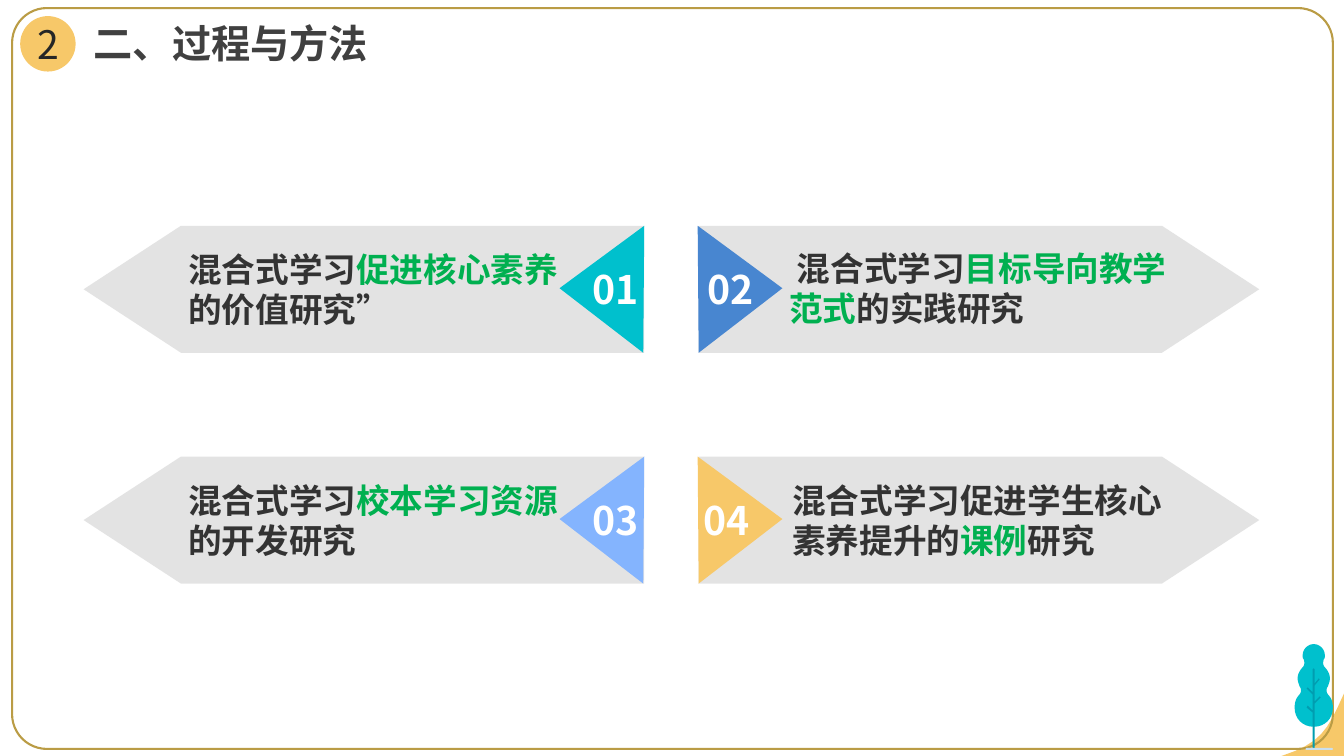
from lxml import etree
from pptx import Presentation, util as u
from pptx.dml import color
from pptx.enum import shapes, text
from pptx.oxml import ns

FONT = "Noto Sans CJK SC"
COLORS = {
    "amber": "F7C869", "gold": "BA9C45", "teal": "00C0CD", "deep_teal": "009DB0",
    "ice": "CADFEF", "blue": "4886D0", "sky": "84B4FE", "grey": "D9D9D9",
    "white": "FFFFFF", "ink": "333333", "green": "00B050",
    "title": "404040", "number": "262626",
}


def rgb(name):
    return color.RGBColor.from_string(COLORS[name])


def curve(start, *segments, steps=8):
    """Points along a chain of cubic Bezier segments (control, control, end)."""
    points = [start]
    for a, b, end in segments:
        origin = points[-1]
        for i in range(1, steps + 1):
            t = i / steps
            weights = ((1 - t) ** 3, 3 * t * (1 - t) ** 2, 3 * t * t * (1 - t), t ** 3)
            points.append(tuple(sum(w * p[axis] for w, p in zip(weights, (origin, a, b, end)))
                                for axis in (0, 1)))
    return points


class Painter:
    def __init__(self, slide):
        self.slide = slide

    def style(self, shape, fill=None, line=None, width=1.5, alpha=None):
        shape.shadow.inherit = False
        if fill:
            shape.fill.solid()
            shape.fill.fore_color.rgb = rgb(fill)
        else:
            shape.fill.background()
        if alpha:
            tint = shape._element.spPr.find(".//" + ns.qn("a:srgbClr"))
            etree.SubElement(tint, ns.qn("a:alpha")).set("val", str(alpha * 1000))
        if line:
            shape.line.color.rgb = rgb(line)
            shape.line.width = u.Pt(width)
        else:
            shape.line.fill.background()
        return shape

    def preset(self, kind, left, top, width, height, adjust=None, flip=False, **look):
        box = [u.Inches(v) for v in (left, top, width, height)]
        shape = self.slide.shapes.add_shape(kind, *box)
        if adjust is not None:
            shape.adjustments[0] = adjust
        if flip:
            shape._element.spPr.xfrm.set("flipH", "1")
        return self.style(shape, **look)

    def outline(self, points, **look):
        emu = [(u.Inches(x), u.Inches(y)) for x, y in points]
        builder = self.slide.shapes.build_freeform(*emu[0])
        builder.add_line_segments(emu[1:], close=True)
        return self.style(builder.convert_to_shape(), **look)

    def set_words(self, shape, parts, size, bold=True, align=text.PP_ALIGN.LEFT,
                  anchor=text.MSO_ANCHOR.MIDDLE, insets=(0.1, 0.05, 0.1, 0.05)):
        frame = shape.text_frame
        frame.word_wrap = True
        frame.auto_size = text.MSO_AUTO_SIZE.NONE
        frame.vertical_anchor = anchor
        (frame.margin_left, frame.margin_top,
         frame.margin_right, frame.margin_bottom) = [u.Inches(v) for v in insets]
        paragraph = frame.paragraphs[0]
        paragraph.alignment = align
        for words, shade in parts:
            run = paragraph.add_run()
            run.text = words
            run.font.size, run.font.bold, run.font.name = u.Pt(size), bold, FONT
            run.font.color.rgb = rgb(shade)
            east_asian = etree.SubElement(run.font._element, ns.qn("a:ea"))
            east_asian.set("typeface", FONT)

    def label(self, left, top, width, height, parts, size):
        box = self.slide.shapes.add_textbox(*[u.Inches(v) for v in (left, top, width, height)])
        self.set_words(box, parts, size, anchor=text.MSO_ANCHOR.TOP)

    def title(self, words, left, top, width, height):
        heading = self.slide.shapes.title
        heading.left, heading.top = u.Inches(left), u.Inches(top)
        heading.width, heading.height = u.Inches(width), u.Inches(height)
        self.set_words(heading, [(words, "title")], 28)


def draw_tree(painter):
    trunk_x = 13.03
    right = curve(
        (trunk_x, 6.39),
        ((13.09, 6.39), (13.14, 6.44), (13.14, 6.5)),
        ((13.14, 6.52), (13.14, 6.53), (13.13, 6.54)),
        ((13.13, 6.54), (13.11, 6.59), (13.14, 6.62)),
        ((13.17, 6.65), (13.19, 6.69), (13.19, 6.73)),
        ((13.19, 6.76), (13.18, 6.78), (13.17, 6.81)),
        ((13.16, 6.82), (13.14, 6.86), (13.18, 6.9)),
        ((13.21, 6.93), (13.22, 6.98), (13.22, 7.02)),
        ((13.22, 7.13), (13.14, 7.21), (trunk_x, 7.21)))
    left = [(2 * trunk_x - x, y) for x, y in reversed(right[1:-1])]
    painter.outline(right + left, fill="teal")
    # Trunk with two twigs on each side
    painter.outline([
        (13.02, 7.43), (13.02, 7.07), (12.96, 7.02), (12.97, 7), (13.02, 7.05),
        (13.02, 6.89), (12.96, 6.83), (12.97, 6.82), (13.02, 6.87), (13.02, 6.64),
        (13.03, 6.63), (13.04, 6.64), (13.04, 6.78), (13.08, 6.73), (13.09, 6.74),
        (13.04, 6.8), (13.04, 6.96), (13.09, 6.91), (13.1, 6.92), (13.04, 6.98),
        (13.04, 7.43)], fill="deep_teal")
    painter.preset(shapes.MSO_SHAPE.ROUNDED_RECTANGLE, 12.95, 7.42, 0.27, 0.02,
                   adjust=0.5, fill="ice")


def draw_topic(painter, number, shade, row_top, on_right, text_at, parts):
    height, plate_width = 1.26, 5.56
    center = 6.655
    side = 1 if on_right else -1
    # Grey arrow plate pointing away from the centre
    painter.preset(shapes.MSO_SHAPE.PENTAGON, 6.93 if on_right else 0.83, row_top,
                   plate_width, height, adjust=0.766, flip=not on_right,
                   fill="grey", alpha=72)
    # Numbered triangle at the inner end
    wedge = painter.outline(
        [(center + side * 0.265, row_top), (center + side * 1.105, row_top + 0.62),
         (center + side * 0.275, row_top + height)], fill=shade)
    insets = (0.04, 0, 0.31, 0) if on_right else (0.31, 0, 0.04, 0)
    align = text.PP_ALIGN.CENTER
    if number == "02":
        insets, align = (0.1, 0.05, 0.1, 0.05), text.PP_ALIGN.LEFT
    painter.set_words(wedge, [(number, "white")], 28, align=align, insets=insets)
    painter.label(*text_at, 3.97, 0.91, parts, 24)


def main():
    deck = Presentation()
    deck.slide_width, deck.slide_height = u.Inches(13.33), u.Inches(7.5)
    painter = Painter(deck.slides.add_slide(deck.slide_layouts[5]))

    # Heading
    badge = painter.preset(shapes.MSO_SHAPE.OVAL, 0.2, 0.16, 0.55, 0.55, fill="amber")
    painter.set_words(badge, [("2", "number")], 28, bold=False,
                      align=text.PP_ALIGN.CENTER, insets=(0, 0, 0, 0))
    painter.title("二、过程与方法", 0.83, 0.15, 11.45, 0.55)

    # Corner hill, frame and tree
    hill = curve((13.33, 6.88), ((13.16, 7.26), (13.1, 7.37), (12.71, 7.5)))
    painter.outline(hill + [(13.33, 7.5)], fill="amber")
    painter.preset(shapes.MSO_SHAPE.ROUNDED_RECTANGLE, 0.12, 0.08, 13.1, 7.35,
                   adjust=0.047, line="gold")
    draw_tree(painter)

    # Four research topics
    upper, lower = 2.24, 4.53
    topics = [
        ("02", "blue", upper, True, (7.73, 2.41),
         [(" 混合式学习", "ink"), ("目标导向教学范式", "green"), ("的实践研究", "ink")]),
        ("01", "teal", upper, False, (1.77, 2.42),
         [("混合式学习", "ink"), ("促进核心素养", "green"), ("的价值研究”", "ink")]),
        ("04", "amber", lower, True, (7.76, 4.71),
         [("混合式学习促进学生核心素养提升的", "ink"), ("课例", "green"), ("研究", "ink")]),
        ("03", "sky", lower, False, (1.77, 4.71),
         [("混合式学习", "ink"), ("校本学习资源", "green"), ("的开发研究", "ink")]),
    ]
    for topic in topics:
        draw_topic(painter, *topic)

    deck.save("out.pptx")


if __name__ == "__main__":
    main()
